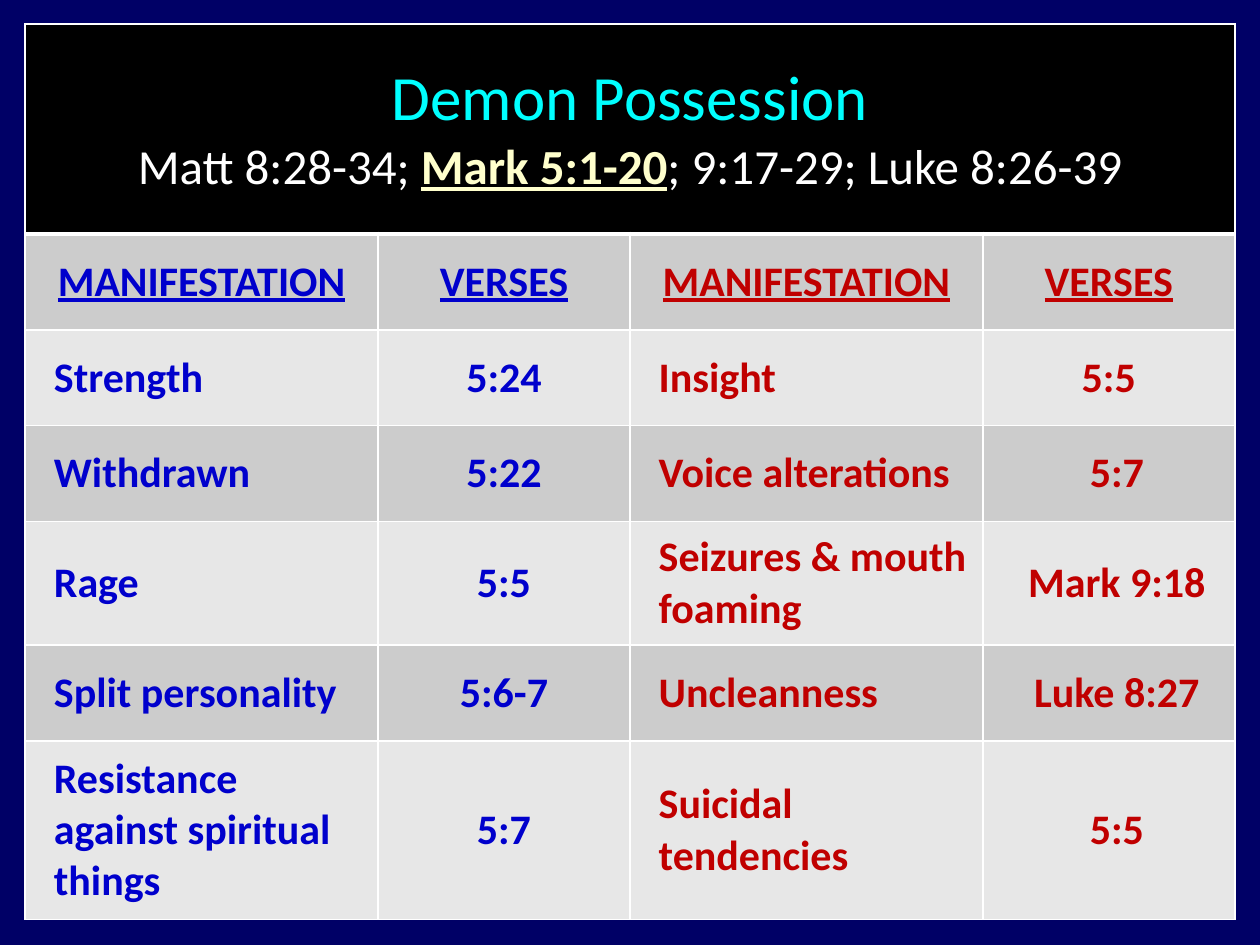
import pptx
import pptx.dml.color
import pptx.enum.text
import pptx.oxml
import pptx.util
from dataclasses import dataclass

Pt = pptx.util.Pt
Align = pptx.enum.text.PP_ALIGN


@dataclass(frozen=True)
class Theme:
    font: str = "Calibri"
    background: str = "000066"
    title_fill: str = "000000"
    bands: tuple = ("CCCCCC", "E7E7E7")
    border: str = "FFFFFF"
    title: str = "00FFFF"
    reference: str = "FFFFFF"
    key_reference: str = "FFFFCC"
    left_half: str = "0000CC"
    right_half: str = "C00000"
    title_size: int = 36
    reference_size: int = 28
    body_size: int = 24


THEME = Theme()


def add_text(para, text, *, size, color, bold=False, underline=False):
    span = para.add_run()
    span.text = text
    span.font.name = THEME.font
    span.font.size = Pt(size)
    span.font.bold = bold
    span.font.underline = underline
    span.font.color.rgb = pptx.dml.color.RGBColor.from_string(color)


def style_cell(cell, fill, top=1, bottom=1):
    """Set borders, then fill: the schema wants them in this order."""
    properties = cell._tc.get_or_add_tcPr()
    for side, width in zip("LRTB", (1, 1, top, bottom)):
        properties.append(pptx.oxml.parse_xml(
            f'<a:ln{side} xmlns:a="http://schemas.openxmlformats.org/drawingml/2006/main"'
            f' w="{Pt(width)}"><a:solidFill><a:srgbClr val="{THEME.border}"/>'
            f'</a:solidFill></a:ln{side}>'))
    cell.fill.solid()
    cell.fill.fore_color.rgb = pptx.dml.color.RGBColor.from_string(fill)
    cell.vertical_anchor = pptx.enum.text.MSO_ANCHOR.MIDDLE
    cell.margin_left = cell.margin_right = Pt(7.2)
    cell.margin_top = cell.margin_bottom = Pt(3.6)


deck = pptx.Presentation()
deck.slide_width, deck.slide_height = Pt(720), Pt(540)
slide = deck.slides.add_slide(deck.slide_layouts[6])
slide.background.fill.solid()
slide.background.fill.fore_color.rgb = pptx.dml.color.RGBColor.from_string(THEME.background)

column_widths = [201.6, 144] * 2
row_heights = [120, 54.8, 54.8, 54.8, 70.5, 54.8, 102.2]
manifestations = [
    ("MANIFESTATION", "VERSES", "MANIFESTATION", "VERSES"),
    ("Strength", "5:24", "Insight", "5:5"),
    ("Withdrawn", "5:22", "Voice alterations", "5:7"),
    ("Rage", "5:5", "Seizures & mouth foaming", "Mark 9:18"),
    ("Split personality", "5:6-7", "Uncleanness", "Luke 8:27"),
    ("Resistance against spiritual things", "5:7", "Suicidal tendencies", "5:5"),
]

table = slide.shapes.add_table(
    len(row_heights), len(column_widths), Pt(14.4), Pt(13.7),
    Pt(sum(column_widths)), Pt(sum(row_heights))).table
table.first_row = table.horz_banding = False
for column, width in zip(table.columns, column_widths):
    column.width = Pt(width)
for row, height in zip(table.rows, row_heights):
    row.height = Pt(height)

# Title row across all columns
title_cell = table.cell(0, 0)
title_cell.merge(table.cell(0, len(column_widths) - 1))
for cell in table.rows[0].cells:
    style_cell(cell, THEME.title_fill, bottom=3)
para = title_cell.text_frame.paragraphs[0]
para.alignment = Align.CENTER
para.space_after = Pt(6)
add_text(para, "Demon Possession", size=THEME.title_size, color=THEME.title)
para.add_line_break()
add_text(para, "Matt 8:28-34; ", size=THEME.reference_size, color=THEME.reference)
add_text(para, "Mark 5:1-20", size=THEME.reference_size, color=THEME.key_reference,
         bold=True, underline=True)
add_text(para, "; 9:17-29; Luke 8:26-39", size=THEME.reference_size, color=THEME.reference)

# Manifestations and verses, in a blue half and a red half
for row_index, texts in enumerate(manifestations):
    is_header = row_index == 0
    for column_index, text in enumerate(texts):
        is_verse = column_index % 2 == 1
        cell = table.cell(row_index + 1, column_index)
        style_cell(cell, THEME.bands[row_index % 2], top=3 if is_header else 1)
        para = cell.text_frame.paragraphs[0]
        para.alignment = Align.CENTER if is_header or is_verse else Align.LEFT
        plain_right = column_index >= 2 and is_header or (row_index, column_index) == (1, 3)
        para.space_after = Pt(0 if plain_right else 12)
        if not is_header and (not is_verse or column_index == 3 and row_index > 1):
            para._p.get_or_add_pPr().set("marL", str(Pt(9.2)))
        add_text(para, text, size=THEME.body_size, bold=True, underline=is_header,
                 color=THEME.left_half if column_index < 2 else THEME.right_half)

deck.save("out.pptx")
